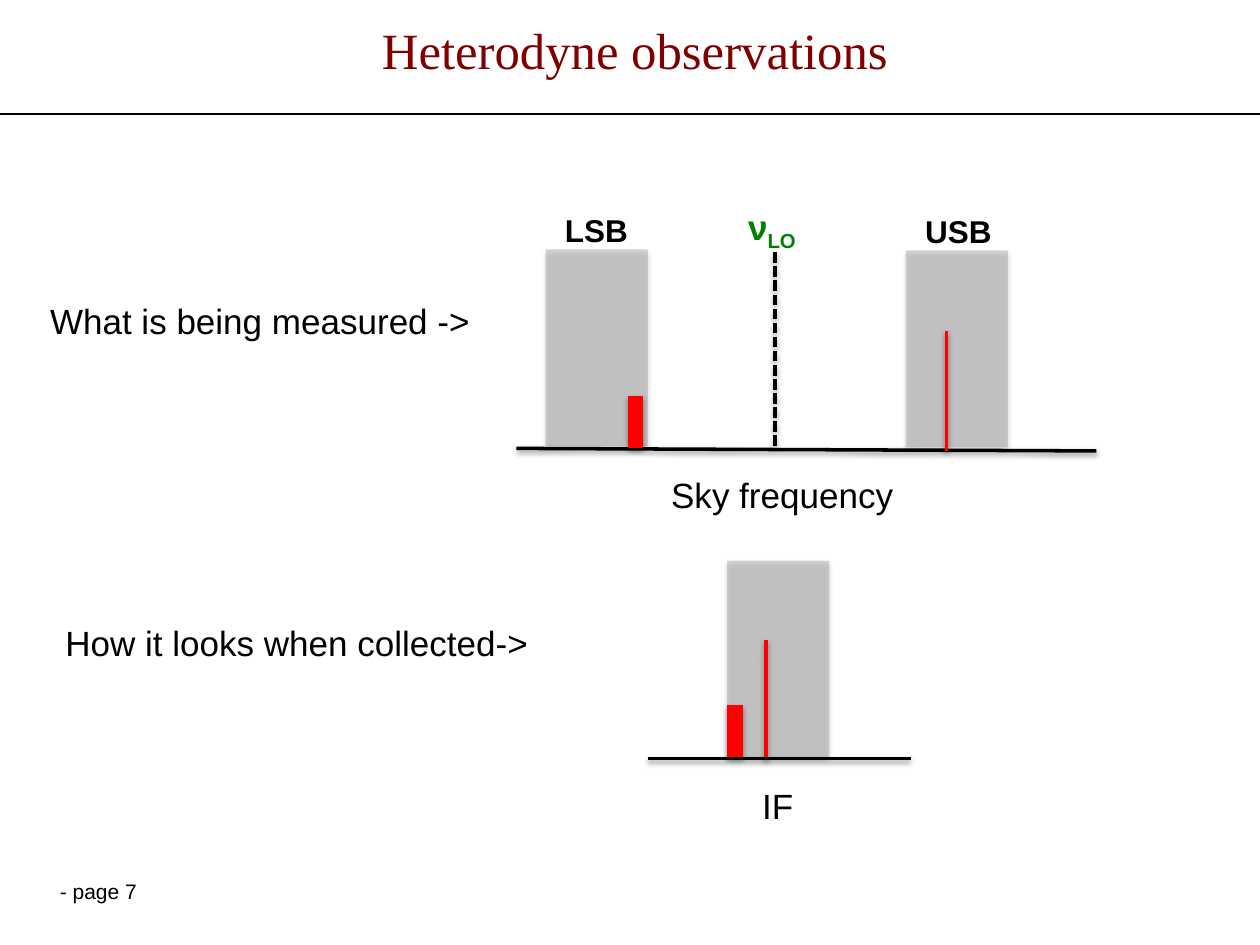
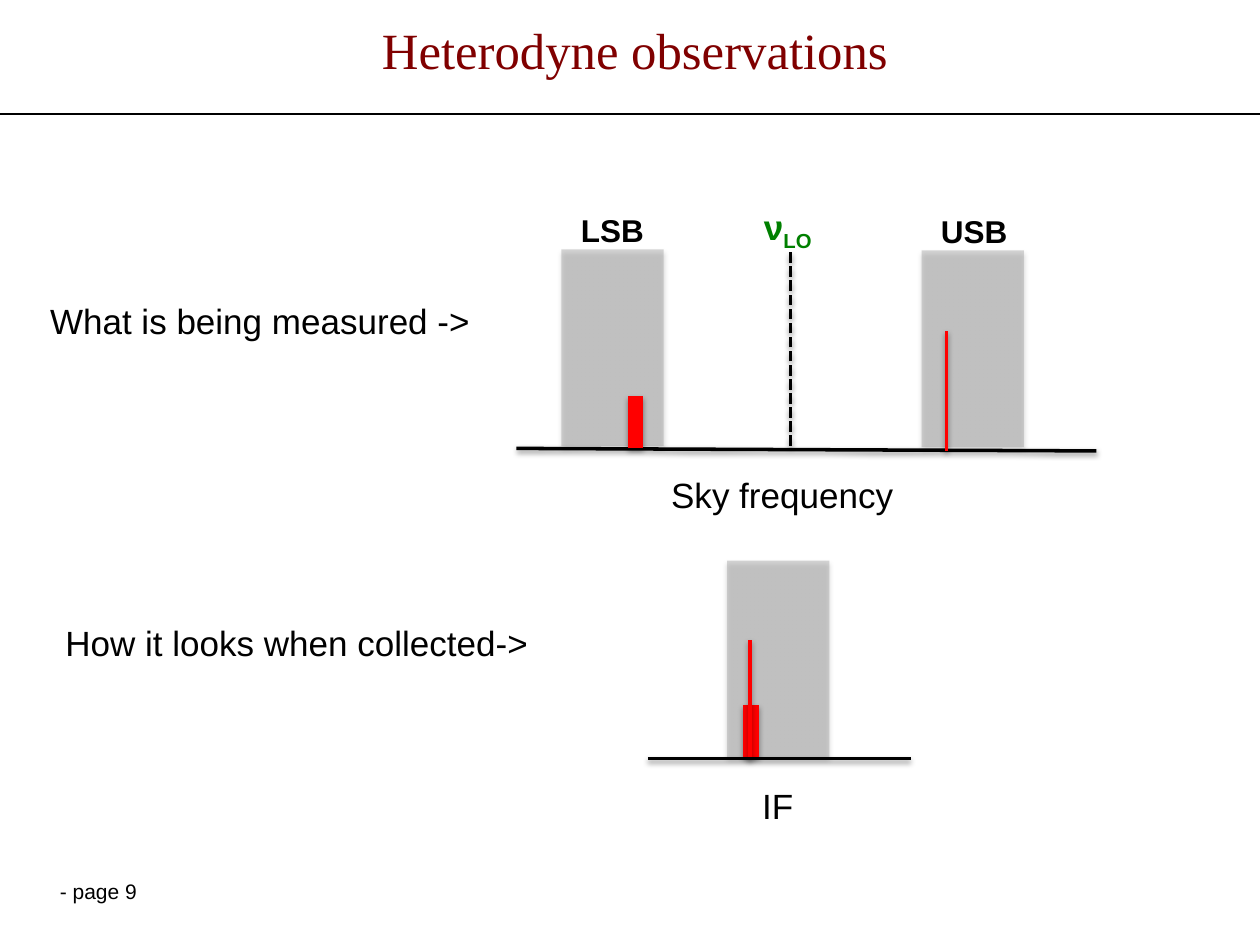
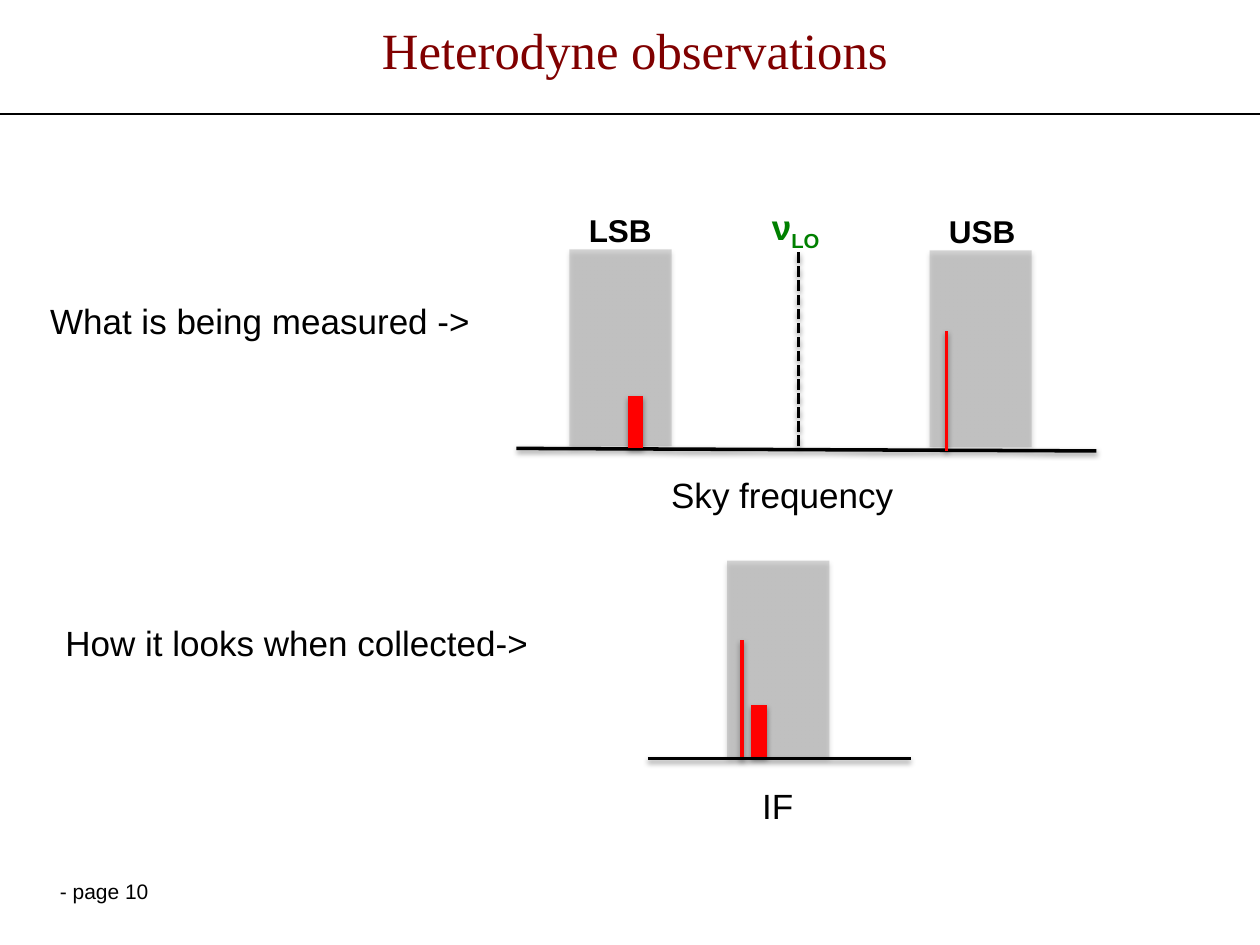
from lxml.etree import SubElement
from pptx import Presentation
from pptx.dml.color import RGBColor
from pptx.enum.dml import MSO_LINE_DASH_STYLE as DASH
from pptx.enum.shapes import MSO_CONNECTOR, MSO_SHAPE
from pptx.enum.text import MSO_ANCHOR, MSO_AUTO_SIZE, PP_ALIGN
from pptx.oxml.ns import qn
from pptx.util import Cm, Pt

BLACK = RGBColor(0x00, 0x00, 0x00)
RED = RGBColor(0xFF, 0x00, 0x00)
GREEN = RGBColor(0x00, 0x80, 0x00)
MAROON = RGBColor(0x80, 0x00, 0x00)
GREY = RGBColor(0xA6, 0xA6, 0xA6)

BAND_W, BAND_H = 2.06, 3.96
WIDE_H, THIN_H = 1.05, 2.41
SKY_Y, IF_Y = 9.04, 15.29


class Deck:
    """Slides with one shared style, drawn in centimetres."""

    def __init__(self):
        self.prs = Presentation()
        self.prs.slide_width, self.prs.slide_height = Cm(25.4), Cm(19.05)
        self.s = None

    def slide(self, title, page):
        """Start a slide with its rule, page number and title."""
        self.s = self.prs.slides.add_slide(self.prs.slide_layouts[6])
        self.line(0, 2.3, 25.4, 2.3, width=1.5, shadow=False)
        self.text(f" - page {page}", 0.84, 17.58, 2.54, 0.89, size=12)
        self.text(title, 5.92, 0, 13.77, 1.98, size=29, font="Times New Roman",
                  color=MAROON, align=PP_ALIGN.CENTER, anchor=MSO_ANCHOR.MIDDLE)

    def text(self, text, x, y, w, h=1.12, size=20, font="Arial", color=BLACK, bold=False,
             align=PP_ALIGN.LEFT, anchor=MSO_ANCHOR.TOP, wrap=True, sub=""):
        """Add a text box, with an optional subscript after the text."""
        tf = self.s.shapes.add_textbox(Cm(x), Cm(y), Cm(w), Cm(h)).text_frame
        tf.word_wrap, tf.vertical_anchor = wrap, anchor
        tf.auto_size = MSO_AUTO_SIZE.NONE
        p = tf.paragraphs[0]
        p.alignment = align
        for part, baseline in ((text, 0), (sub, -25000)):
            if not part:
                continue
            r = p.add_run()
            r.text = part
            r.font.size, r.font.name, r.font.bold = Pt(size), font, bold
            r.font.color.rgb = color
            if baseline:
                r.font._element.set("baseline", str(baseline))

    def effects(self, sp, opacity=0, distance=0):
        """Give a shape a soft shadow below, or none at zero opacity."""
        effects = SubElement(sp._element.spPr, qn("a:effectLst"))
        if opacity:
            shadow = SubElement(effects, qn("a:outerShdw"), blurRad=str(Pt(3.1)),
                                dist=str(Pt(distance)), dir="5400000", rotWithShape="0")
            color = SubElement(shadow, qn("a:srgbClr"), val=str(BLACK))
            SubElement(color, qn("a:alpha"), val=str(opacity * 1000))

    def line(self, x1, y1, x2, y2, width=2, color=BLACK, dash=None, shadow=True):
        """Add a straight line."""
        sp = self.s.shapes.add_connector(MSO_CONNECTOR.STRAIGHT,
                                         Cm(x1), Cm(y1), Cm(x2), Cm(y2))
        sp.line.width, sp.line.color.rgb = Pt(width), color
        if dash:
            sp.line.dash_style = dash
        self.effects(sp, 38 if shadow else 0, 1.6)

    def band(self, x, y):
        """Add a translucent sideband."""
        sp = self.s.shapes.add_shape(MSO_SHAPE.RECTANGLE, Cm(x), Cm(y), Cm(BAND_W), Cm(BAND_H))
        sp.fill.solid()
        sp.fill.fore_color.rgb = GREY
        color = sp._element.spPr.find(qn("a:solidFill"))[0]
        SubElement(color, qn("a:alpha"), val="46000")
        sp.line.fill.background()
        self.effects(sp, 35, 1.8)

    def signals(self, wide_x, wide_y, thin_x, thin_y):
        """Add the wide and the thin spectral line, rising from their feet."""
        self.line(wide_x, wide_y, wide_x, wide_y - WIDE_H, width=9, color=RED)
        self.line(thin_x, thin_y, thin_x, thin_y - THIN_H, color=RED)

    def sky(self, shift):
        """Draw the sky spectrum with the receiver tuned by shift."""
        for name, x, y, w in (("LSB", 11, 5.03, 1.8), ("USB", 18.26, 5.05, 1.85)):
            self.band(x + shift, y)
            self.text(name, x + 0.14 + shift, y - 0.91, w, 1.02, size=18, bold=True, wrap=False)
        self.line(15.62 + shift, 8.99, 15.62 + shift, 5.03, dash=DASH.SQUARE_DOT)
        self.text("ν", 14.83 + shift, 4.01, BAND_W, color=GREEN, bold=True, sub="LO")
        self.line(10.41, SKY_Y, 22.1, SKY_Y + 0.05)
        self.signals(12.81, SKY_Y, 19.08, SKY_Y + 0.05)
        self.text("Sky frequency", 10.74, 9.42, 10.06, align=PP_ALIGN.CENTER)

    def folded(self, shift):
        """Draw the intermediate frequency, where the signals move opposite ways."""
        self.band(14.66, 11.3)
        self.signals(14.82 + shift, IF_Y - 0.02, 15.44 - shift, IF_Y + 0.03)
        self.line(13.06, IF_Y, 18.36, IF_Y)
        self.text("IF", 14.6, 15.7, 2.16, align=PP_ALIGN.CENTER)


def main():
    deck = Deck()
    for page, shift in ((7, 0), (9, 0.32), (10, 0.48)):
        deck.slide("Heterodyne observations", page)
        deck.text("What is being measured ->", 0.76, 5.92, 9.04, wrap=False)
        deck.text("How it looks when collected->", 1.07, 12.4, 9.91, wrap=False)
        deck.sky(shift)
        deck.folded(shift)
    deck.prs.save("out.pptx")


if __name__ == "__main__":
    main()
